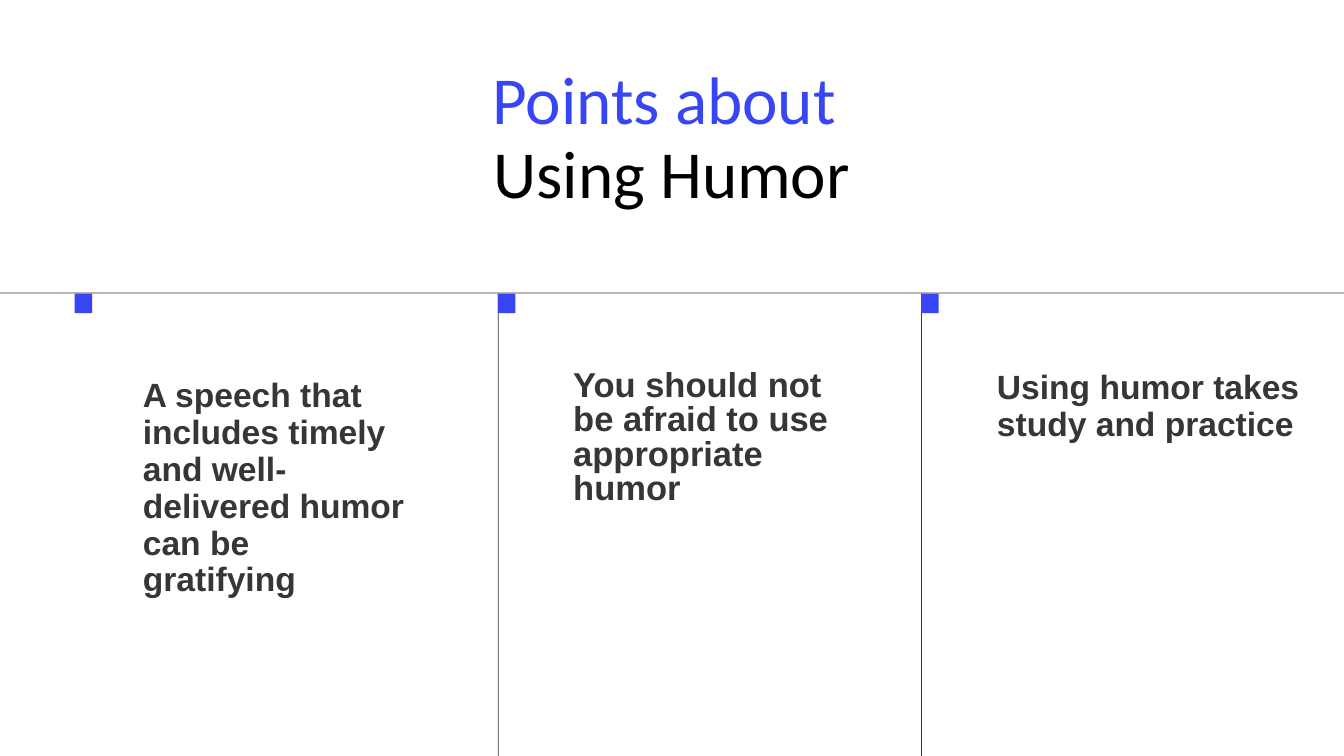
"""Build a slide with a two-colour title above three ruled columns of points about humor."""
import pptx
import pptx.dml.color
import pptx.enum.shapes
import pptx.enum.text
import pptx.util

Pt = pptx.util.Pt

THEME = {
    "accent": "3745F4", "ink": "373636", "black": "000000",
    "title_font": "Calibri", "body_font": "Arial",
    "title_size": 72, "body_size": 36, "large_size": 37,
}
TITLE = [("Points about ", "accent"), ("Using Humor", "black")]
POINTS = [
    {"text": "A speech that includes timely and well-delivered humor can be gratifying",
     "place": (123.1, 403.9, 314.6, 242.6), "size": "body_size", "spacing": 39.6, "level": 1, "indent": 30},
    {"text": "You should not be afraid to use appropriate humor",
     "place": (614.2, 396, 309.6, 149.8), "size": "large_size", "spacing": 37, "level": 0, "indent": 0},
    {"text": "Using humor takes study and practice",
     "place": (1038.2, 396, 358.6, 121), "size": "body_size", "spacing": 39.6, "level": 1, "indent": 30},
]
WIDTH, HEIGHT = 1440, 810
TITLE_PLACE = (275.8, 69.1, 887.8, 159.8)
RULE_TOP, RULE_WEIGHT = 313.6, 0.9
COLUMN_LEFT, COLUMN_PITCH = 80, 453.5
MARKER_WIDTH, MARKER_HEIGHT = 18.7, 21


def colour(name):
    return pptx.dml.color.RGBColor.from_string(THEME[name])


def write_text(box, spans, *, font, size, spacing, bold=False, align=None, level=0, indent=0):
    frame = box.text_frame
    frame.word_wrap = True
    frame.auto_size = pptx.enum.text.MSO_AUTO_SIZE.SHAPE_TO_FIT_TEXT
    frame.vertical_anchor = pptx.enum.text.MSO_ANCHOR.TOP
    frame.margin_left = frame.margin_top = frame.margin_right = frame.margin_bottom = 0
    para = frame.paragraphs[0]
    para.alignment = align
    para.level = level
    para.line_spacing = Pt(spacing)
    properties = para._p.get_or_add_pPr()
    properties.set("marL", str(Pt(indent)))
    properties.set("indent", "0")
    for index, (text, ink) in enumerate(spans):
        if index:
            para.add_line_break()
        span = para.add_run()
        span.text = text
        span.font.name = THEME[font]
        span.font.size = Pt(THEME[size])
        span.font.bold = bold
        span.font.color.rgb = colour(ink)


def add_block(slide, left, top, width, height, fill):
    block = slide.shapes.add_shape(
        pptx.enum.shapes.MSO_SHAPE.RECTANGLE, Pt(left), Pt(top), Pt(width), Pt(height))
    block.shadow.inherit = False
    block.fill.solid()
    block.fill.fore_color.rgb = colour(fill)
    block.line.fill.background()


def main():
    deck = pptx.Presentation()
    deck.slide_width, deck.slide_height = Pt(WIDTH), Pt(HEIGHT)
    slide = deck.slides.add_slide(deck.slide_layouts[5])

    title = slide.shapes.title
    title.left, title.top, title.width, title.height = map(Pt, TITLE_PLACE)
    write_text(title, TITLE, font="title_font", size="title_size", spacing=79.2,
               align=pptx.enum.text.PP_ALIGN.CENTER)

    columns = [COLUMN_LEFT + index * COLUMN_PITCH for index in range(len(POINTS))]
    body_top = RULE_TOP + RULE_WEIGHT
    add_block(slide, 0, RULE_TOP, WIDTH, RULE_WEIGHT, "ink")
    for left in columns[1:]:
        add_block(slide, left, body_top, RULE_WEIGHT, HEIGHT - body_top, "ink")
    for left in columns:
        add_block(slide, left, body_top, MARKER_WIDTH, MARKER_HEIGHT, "accent")

    for point in POINTS:
        box = slide.shapes.add_textbox(*map(Pt, point["place"]))
        write_text(box, [(point["text"], "ink")], font="body_font", size=point["size"],
                   spacing=point["spacing"], bold=True, level=point["level"], indent=point["indent"])

    deck.save("out.pptx")


if __name__ == "__main__":
    main()
